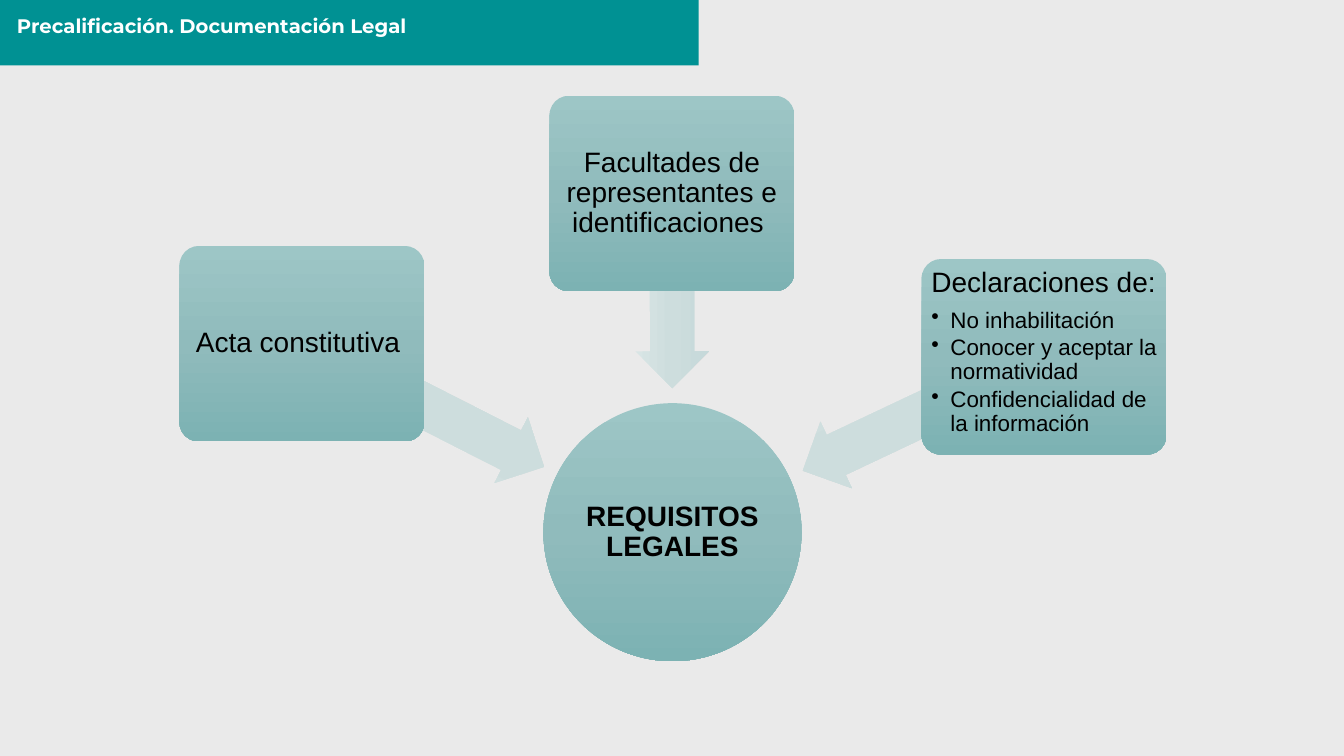
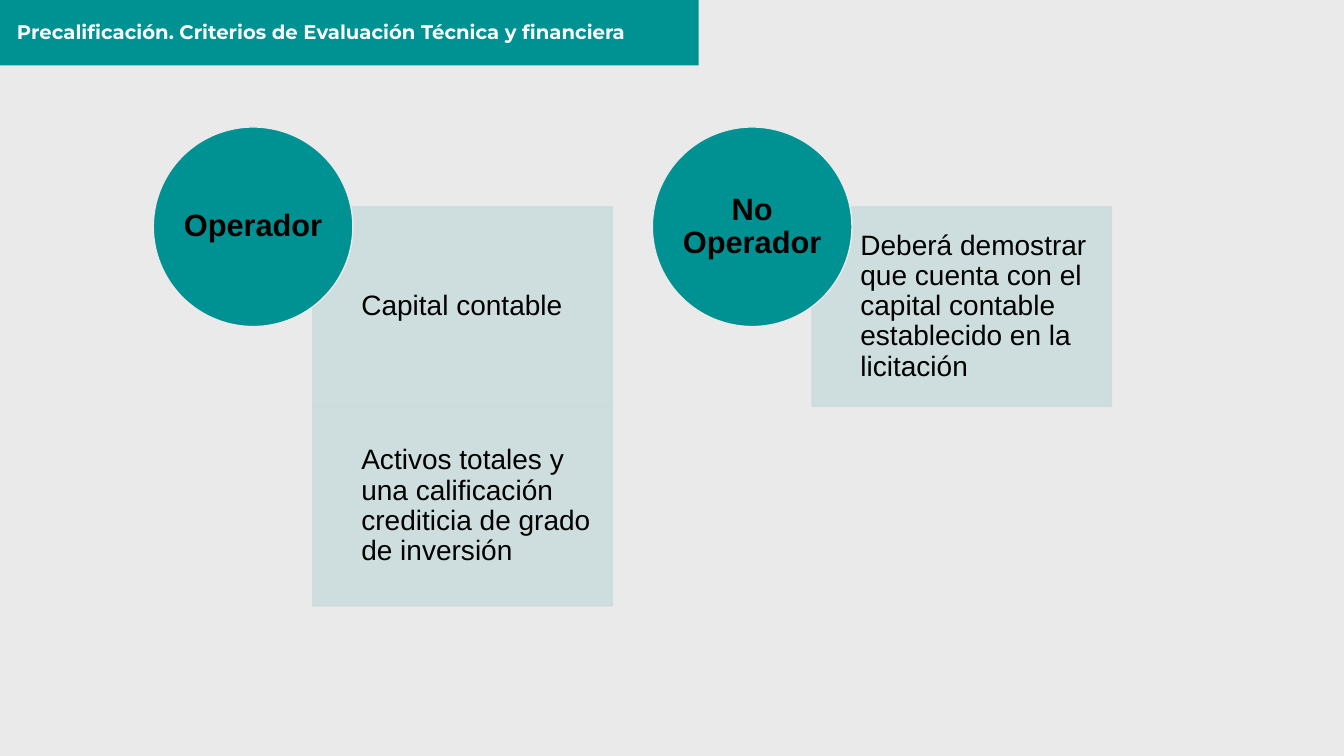
from copy import deepcopy
from math import atan2, degrees, hypot

from lxml import etree
from pptx import Presentation
from pptx.dml.color import RGBColor
from pptx.enum.shapes import MSO_SHAPE
from pptx.enum.text import MSO_ANCHOR, PP_ALIGN
from pptx.oxml.ns import qn
from pptx.util import Inches, Pt

RECT, OVAL = MSO_SHAPE.RECTANGLE, MSO_SHAPE.OVAL
ROUND, ARROW = MSO_SHAPE.ROUNDED_RECTANGLE, MSO_SHAPE.LEFT_ARROW
LEFT, CENTER = PP_ALIGN.LEFT, PP_ALIGN.CENTER
TOP, MIDDLE = MSO_ANCHOR.TOP, MSO_ANCHOR.MIDDLE

PAPER = RGBColor(0xEA, 0xEA, 0xEA)
TEAL = RGBColor(0x00, 0x91, 0x93)
DISC = RGBColor(0x00, 0x91, 0x92)
PALE = RGBColor(0xCC, 0xDC, 0xDC)
WHITE = RGBColor(0xFE, 0xFF, 0xFF)
BLACK = RGBColor(0, 0, 0)
DEEP = [RGBColor(0x9D, 0xC6, 0xC6), RGBColor(0x90, 0xBB, 0xBC),
        RGBColor(0x7C, 0xB2, 0xB3)]
SOFT = [RGBColor(0xD8, 0xE5, 0xE5), RGBColor(0xCD, 0xDD, 0xDD),
        RGBColor(0xC6, 0xD9, 0xDA)]

# Slide 1: title, its top, hub, and cards as (left, top, heading, bullets)
LEGAL = "Precalificación. Documentación Legal", -0.01
HUB = "REQUISITOS LEGALES"
CARDS = [
    (1.78, 2.44, "Acta constitutiva ", []),
    (5.45, 0.95, "Facultades de representantes e identificaciones ", []),
    (9.14, 2.57, "Declaraciones de:", [
        "No inhabilitación",
        "Conocer y aceptar la normatividad",
        "Confidencialidad de la información"]),
]
HUB_X, HUB_Y, HUB_D = 6.67, 5.28, 2.56
CARD_W, CARD_H = 2.43, 1.94
ARROW_H, GAP = 0.73, 0.15

# Slide 2: title, its top, and a column of panels under each disc
TECH = "Precalificación. Criterios de Evaluación Técnica y financiera", 0.05
GROUPS = [
    ("Operador", [
        "Capital contable",
        "Activos totales y una calificación crediticia de grado de inversión"]),
    ("No Operador", [
        "Deberá demostrar que cuenta con el capital contable establecido "
        "en la licitación"]),
]
DISC_X, DISC_Y, DISC_D, PITCH = 1.52, 1.26, 1.98, 4.95


def add(slide, kind, x, y, w, h):
    shape = slide.shapes.add_shape(
        kind, Inches(x), Inches(y), Inches(w), Inches(h))
    shape.shadow.inherit = False
    shape.line.fill.background()
    return shape


def paint(shape, color):
    shape.fill.solid()
    shape.fill.fore_color.rgb = color


def edge(shape, color):
    shape.line.color.rgb = color
    shape.line.width = Pt(1)


def shade(shape, colors):
    """Fill from top to bottom with three evenly placed colours."""
    shape.fill.gradient()
    shape.fill.gradient_angle = 270
    stops = shape._element.spPr.find(qn("a:gradFill")).find(qn("a:gsLst"))
    stops.insert(1, deepcopy(stops[0]))
    for i, (stop, color) in enumerate(zip(shape.fill.gradient_stops, colors)):
        stop.position = i / 2
        stop.color.rgb = color


def fade(shape, share):
    """Make the fill and the line of a shape partly clear."""
    for color in shape._element.spPr.iter(qn("a:srgbClr")):
        etree.SubElement(color, qn("a:alpha"), val=str(int(share * 100000)))


def style(para, size, color=BLACK, bold=False, font="Arial", align=LEFT):
    para.alignment = align
    para.line_spacing = 0.9
    for run in para.runs:
        run.font.name, run.font.size = font, Pt(size)
        run.font.bold = bold
        run.font.color.rgb = color


def write(shape, text, size, pads=(0, 0, 0, 0), anchor=MIDDLE, **look):
    """Put one paragraph in a shape; pads are left, top, right, bottom."""
    frame = shape.text_frame
    frame.word_wrap = True
    frame.vertical_anchor = anchor
    (frame.margin_left, frame.margin_top,
     frame.margin_right, frame.margin_bottom) = map(Inches, pads)
    frame.text = text
    style(frame.paragraphs[0], size, **look)
    return frame


def bullet(frame, text):
    frame.paragraphs[-1].space_after = Pt(7 if len(frame.paragraphs) == 1 else 2.4)
    para = frame.add_paragraph()
    para.text = text
    props = para._p.get_or_add_pPr()
    indent = Inches(0.19)
    props.set("marL", str(indent))
    props.set("indent", str(-indent))
    etree.SubElement(props, qn("a:buChar"), char="•")
    style(para, 16)


def start(deck, title, top):
    """Add a slide with the title band."""
    slide = deck.slides.add_slide(deck.slide_layouts[6])
    paint(add(slide, RECT, 0, 0, 6.93, 0.65), TEAL)
    box = slide.shapes.add_textbox(
        Inches(0.07), Inches(top), Inches(6.8), Inches(0.55))
    write(box, title, 14, (0.1, 0.05, 0.1, 0.05),
          color=WHITE, bold=True, font="Montserrat")
    return slide


def point(slide, x, y):
    """Draw an arrow from a card's centre to just outside the hub."""
    dx, dy = HUB_X - x, HUB_Y - y
    dist = hypot(dx, dy)
    size = dist - HUB_D / 2 - GAP
    half = size / dist / 2
    arrow = add(slide, ARROW, x + dx * half - size / 2,
                y + dy * half - ARROW_H / 2, size, ARROW_H)
    arrow.adjustments[0], arrow.adjustments[1] = 0.6, 0.5
    arrow.rotation = degrees(atan2(dy, dx)) + 180
    shade(arrow, SOFT)


def legal(deck):
    slide = start(deck, *LEGAL)
    hub = add(slide, OVAL, HUB_X - HUB_D / 2, HUB_Y - HUB_D / 2, HUB_D, HUB_D)
    shade(hub, DEEP)
    write(hub, HUB, 20, (0.01,) * 4, bold=True, align=CENTER)
    for x, y, head, items in CARDS:
        point(slide, x + CARD_W / 2, y + CARD_H / 2)
        card = add(slide, ROUND, x, y, CARD_W, CARD_H)
        card.adjustments[0] = 0.1
        shade(card, DEEP)
        frame = write(card, head, 20, (0.04,) * 4,
                      anchor=TOP if items else MIDDLE,
                      align=LEFT if items else CENTER)
        for item in items:
            bullet(frame, item)


def tech(deck):
    slide = start(deck, *TECH)
    for col, (name, items) in enumerate(GROUPS):
        x = DISC_X + col * PITCH
        for row, item in enumerate(items):
            panel = add(slide, RECT, x + 0.8 * DISC_D,
                        DISC_Y + (0.4 + row) * DISC_D, 1.5 * DISC_D, DISC_D)
            paint(panel, PALE)
            edge(panel, PALE)
            fade(panel, 0.9)
            write(panel, item, 20, (0.48, 0.16, 0.16, 0.16))
        disc = add(slide, OVAL, x, DISC_Y, DISC_D, DISC_D)
        paint(disc, DISC)
        edge(disc, PAPER)
        write(disc, name, 22, bold=True, align=CENTER)


def main():
    deck = Presentation()
    deck.slide_width, deck.slide_height = Inches(13.33), Inches(7.5)
    back = deck.slide_master.background.fill
    back.solid()
    back.fore_color.rgb = PAPER
    legal(deck)
    tech(deck)
    deck.save("out.pptx")


if __name__ == "__main__":
    main()
